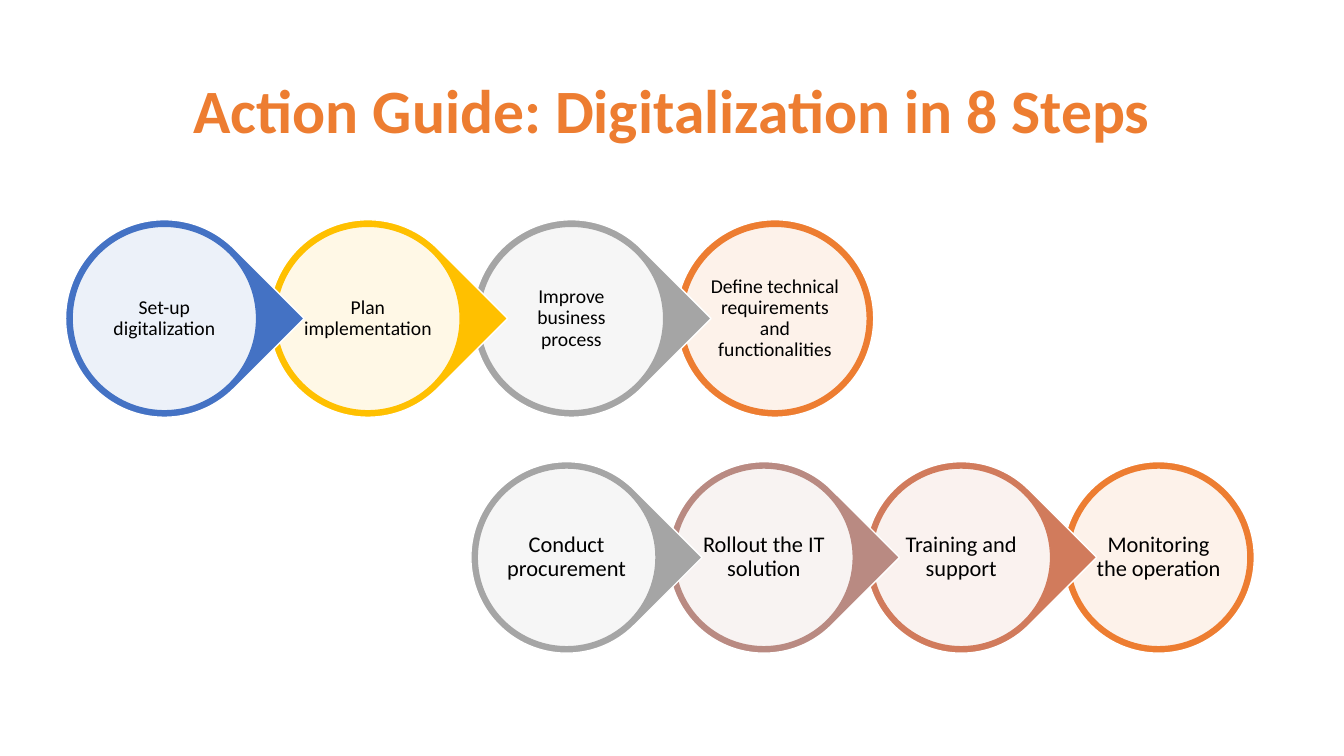
from dataclasses import dataclass

from lxml.etree import SubElement
from pptx import Presentation
from pptx.dml.color import RGBColor
from pptx.enum.shapes import MSO_SHAPE
from pptx.enum.text import MSO_ANCHOR, PP_ALIGN
from pptx.oxml.ns import qn
from pptx.util import Inches, Pt


@dataclass(frozen=True)
class Theme:
    font: str = "Calibri"
    title_size: int = 44
    first_row_size: int = 14
    second_row_size: int = 16
    white: str = "FFFFFF"
    text: str = "000000"
    blue: str = "4472C4"
    yellow: str = "FFC000"
    gray: str = "A5A5A5"
    orange: str = "ED7D31"
    mauve: str = "B98A82"
    rust: str = "D17B5C"
    disc_alpha: int = 90


THEME = Theme()

PREPARATION = [
    ("Set-up digitalization", THEME.blue),
    ("Plan implementation", THEME.yellow),
    ("Improve business process", THEME.gray),
    ("Define technical requirements and functionalities", THEME.orange),
]
DELIVERY = [
    ("Conduct procurement", THEME.gray),
    ("Rollout the IT solution", THEME.mauve),
    ("Training and support", THEME.rust),
    ("Monitoring the operation", THEME.orange),
]


def write_text(s, text, size, color, bold=False):
    """Centre one paragraph in a shape."""
    tf = s.text_frame
    tf.word_wrap = True
    tf.vertical_anchor = MSO_ANCHOR.MIDDLE
    p = tf.paragraphs[0]
    p.text = text
    p.alignment = PP_ALIGN.CENTER
    p.line_spacing = 0.9
    p.font.name = THEME.font
    p.font.size = Pt(size)
    p.font.bold = bold
    p.font.color.rgb = RGBColor.from_string(color)
    return tf


def add_round(shapes, kind, left, top, size, fill, line):
    """Add a square-boxed shape with a solid fill and a thin outline."""
    s = shapes.add_shape(kind, Inches(left), Inches(top), Inches(size), Inches(size))
    s.shadow.inherit = False
    s.fill.solid()
    s.fill.fore_color.rgb = RGBColor.from_string(fill)
    s.line.color.rgb = RGBColor.from_string(line)
    s.line.width = Pt(1)
    return s


def add_title(slide, left, top, width, height):
    s = slide.shapes.add_textbox(Inches(left), Inches(top), Inches(width), Inches(height))
    write_text(s, "Action Guide: Digitalization in 8 Steps",
               THEME.title_size, THEME.orange, bold=True)


def add_step(shapes, left, top, size, label, color, text_size, is_last):
    # Coloured backing: a drop pointing right, or a plain circle at the end
    kind = MSO_SHAPE.OVAL if is_last else MSO_SHAPE.TEAR
    backing = add_round(shapes, kind, left, top, size, color, THEME.white)
    backing.rotation = 0 if is_last else 45

    # Translucent disc
    rim = size / 30
    disc_size = size - 2 * rim
    disc = add_round(shapes, MSO_SHAPE.OVAL, left + rim, top + rim,
                     disc_size, THEME.white, color)
    rgb = disc.fill._xPr.find(qn("a:solidFill")).find(qn("a:srgbClr"))
    SubElement(rgb, qn("a:alpha"), val=str(THEME.disc_alpha * 1000))

    # Label in the disc, free of side margins so that long words fit
    tf = write_text(disc, label, text_size, THEME.text)
    tf.margin_left = tf.margin_right = 0
    tf.margin_top = tf.margin_bottom = Inches(0.02)


def add_step_row(slide, left, top, size, steps, text_size):
    group = slide.shapes.add_group_shape()
    pitch = size * 1.03
    last = len(steps) - 1
    # Right to left, so that each point overlaps the next step
    for i, (label, color) in reversed(list(enumerate(steps))):
        add_step(group.shapes, left + i * pitch, top, size,
                 label, color, text_size, i == last)


def main():
    prs = Presentation()
    prs.slide_width, prs.slide_height = Inches(13.33), Inches(7.5)
    slide = prs.slides.add_slide(prs.slide_layouts[6])
    add_step_row(slide, 0.65, 2.18, 1.96, PREPARATION, THEME.first_row_size)
    add_step_row(slide, 4.67, 4.58, 1.9, DELIVERY, THEME.second_row_size)
    add_title(slide, 0.92, 0.4, 11.5, 1.45)
    prs.save("out.pptx")


if __name__ == "__main__":
    main()
